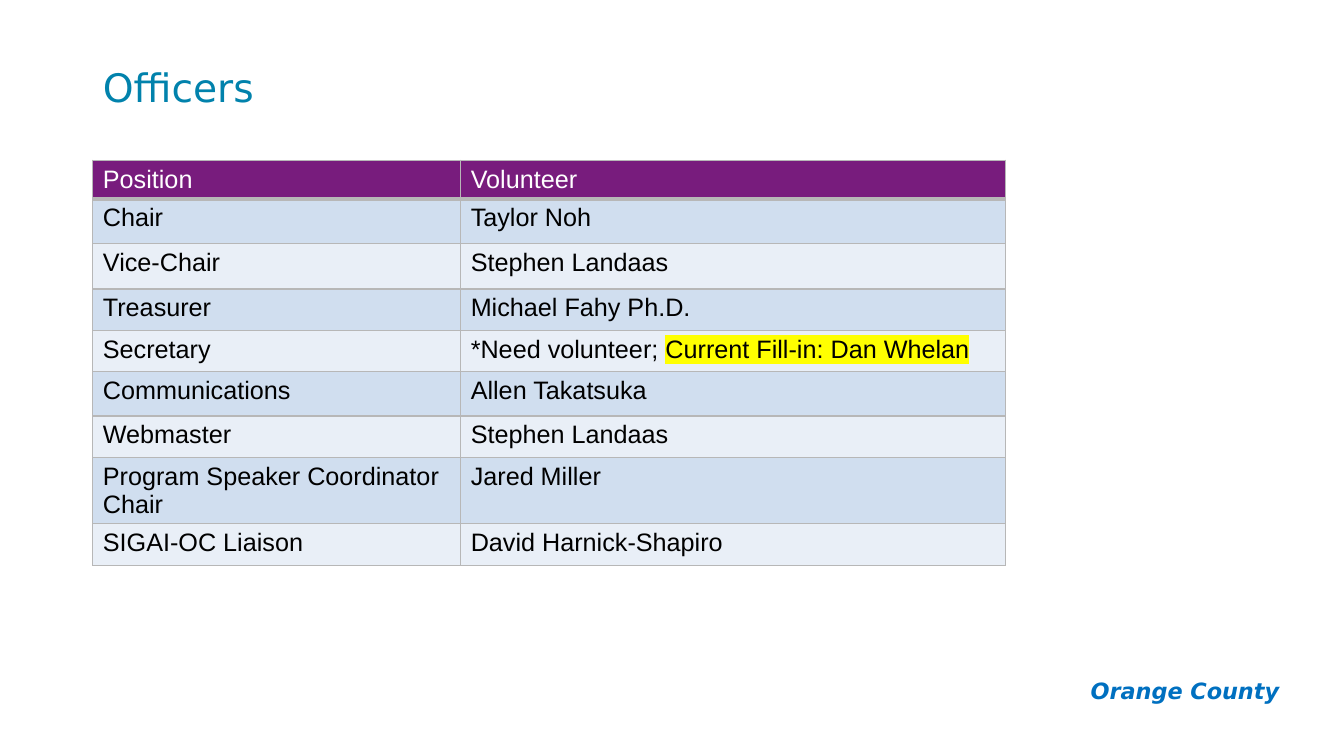
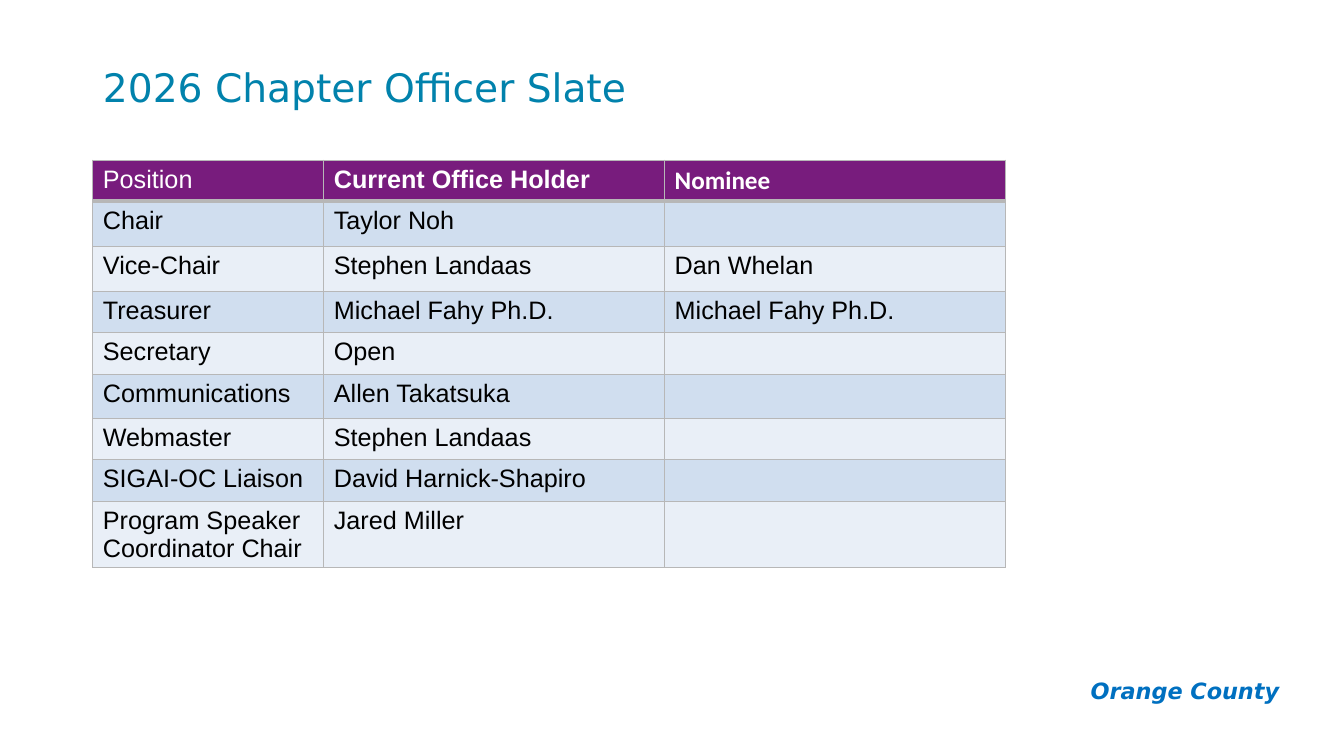
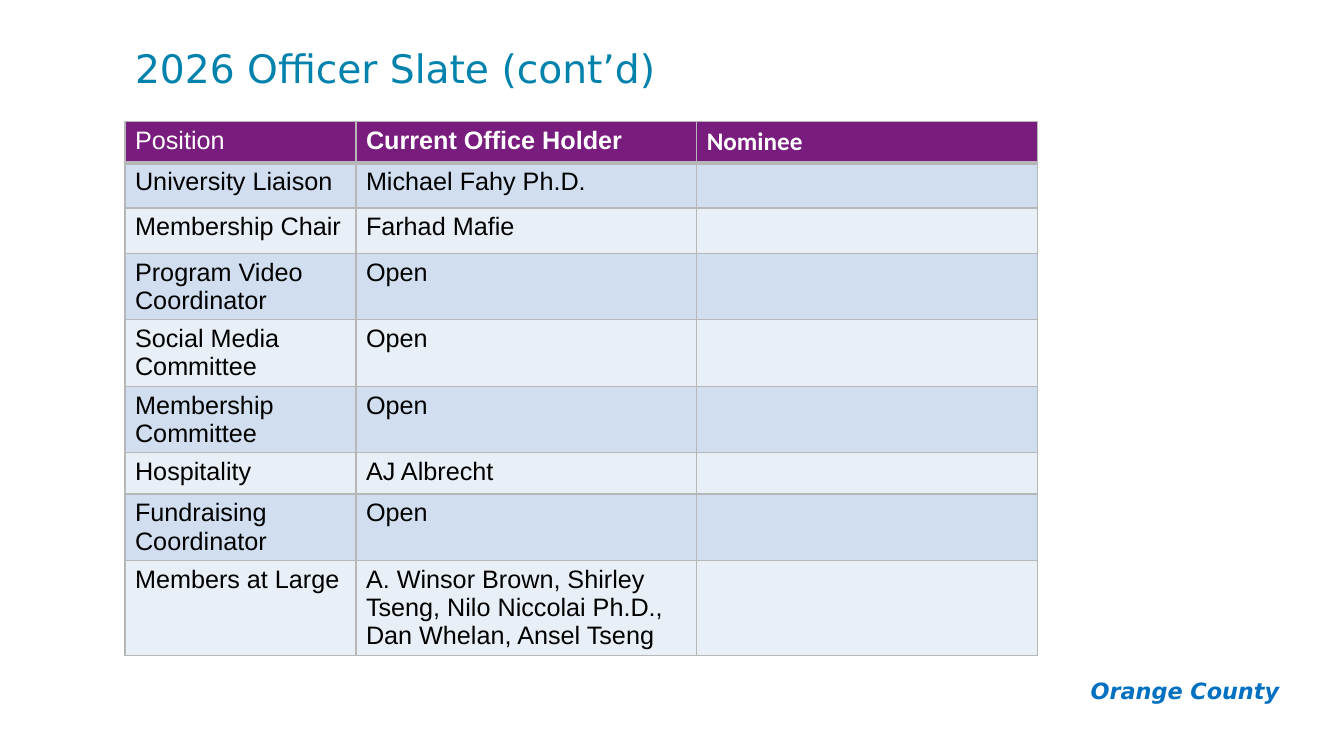
import pptx
import pptx.dml.color
import pptx.enum.text
import pptx.oxml
import pptx.oxml.ns
import pptx.util
from pptx.dml.color import RGBColor
from pptx.util import Cm

TEAL = RGBColor(0x01, 0x82, 0xAC)
BLUE = RGBColor(0x00, 0x70, 0xC0)
PURPLE = RGBColor(0x78, 0x1C, 0x7D)
BAND_DARK = RGBColor(0xD0, 0xDE, 0xEF)
BAND_LIGHT = RGBColor(0xE9, 0xEF, 0xF7)
GREY = RGBColor(0xB7, 0xB7, 0xB7)
YELLOW = RGBColor(0xFF, 0xFF, 0x00)
WHITE = RGBColor(0xFF, 0xFF, 0xFF)
BLACK = RGBColor(0x00, 0x00, 0x00)

TITLE_FONT = "DejaVu Sans"
TABLE_FONT = "Arial"
NAMESPACE = pptx.oxml.ns.nsdecls("a")
FILL_IN = "Current Fill-in: Dan Whelan"
SLATE_HEADER = ["Position", "Current Office Holder", "Nominee"]
SLATE_WIDTHS = [5.82, 8.59, 8.59]
OFFICER_HEIGHTS = [0.91, 1.14, 1.14, 1.04, 1.04, 1.12, 1.04, 1.04, 1.04]

SLIDES = [
    {
        "title": "Officers",
        "left": 2.34,
        "title_top": 1.02,
        "table_top": 4.04,
        "widths": [9.27, 13.72],
        "heights": OFFICER_HEIGHTS,
        "rows": [
            ["Position", "Volunteer"],
            ["Chair", "Taylor Noh"],
            ["Vice-Chair", "Stephen Landaas"],
            ["Treasurer", "Michael Fahy Ph.D."],
            ["Secretary", "*Need volunteer; " + FILL_IN],
            ["Communications", "Allen Takatsuka"],
            ["Webmaster", "Stephen Landaas"],
            ["Program Speaker Coordinator Chair", "Jared Miller"],
            ["SIGAI-OC Liaison", "David Harnick-Shapiro"],
        ],
    },
    {
        "title": "2026 Chapter Officer Slate",
        "left": 2.34,
        "title_top": 1.02,
        "table_top": 4.04,
        "widths": SLATE_WIDTHS,
        "heights": OFFICER_HEIGHTS,
        "rows": [
            SLATE_HEADER,
            ["Chair", "Taylor Noh", ""],
            ["Vice-Chair", "Stephen Landaas", "Dan Whelan"],
            ["Treasurer", "Michael Fahy Ph.D.", "Michael Fahy Ph.D."],
            ["Secretary", "Open", ""],
            ["Communications", "Allen Takatsuka", ""],
            ["Webmaster", "Stephen Landaas", ""],
            ["SIGAI-OC Liaison", "David Harnick-Shapiro", ""],
            ["Program Speaker Coordinator Chair", "Jared Miller", ""],
        ],
    },
    {
        "title": "2026 Officer Slate (cont’d)",
        "left": 3.15,
        "title_top": 0.53,
        "table_top": 3.07,
        "widths": SLATE_WIDTHS,
        "heights": [0.91, 1.14, 1.14] + [1.04] * 6,
        "rows": [
            SLATE_HEADER,
            ["University Liaison", "Michael Fahy Ph.D.", ""],
            ["Membership Chair", "Farhad Mafie", ""],
            ["Program Video Coordinator", "Open", ""],
            ["Social Media Committee", "Open", ""],
            ["Membership Committee", "Open", ""],
            ["Hospitality", "AJ Albrecht", ""],
            ["Fundraising Coordinator", "Open", ""],
            [
                "Members at Large",
                "A. Winsor Brown, Shirley Tseng, Nilo Niccolai Ph.D., Dan Whelan, Ansel Tseng",
                "",
            ],
        ],
    },
]


def add_run(paragraph, text, size, font_name, color, bold=False, italic=False):
    run = paragraph.add_run()
    run.text = text
    run.font.size = pptx.util.Pt(size)
    run.font.name = font_name
    run.font.color.rgb = color
    run.font.bold = bold
    run.font.italic = italic
    return run


def set_borders(cell, top, bottom):
    properties = cell._tc.get_or_add_tcPr()
    for side, points in (("L", 1), ("R", 1), ("T", top), ("B", bottom)):
        properties.append(pptx.oxml.parse_xml(
            f'<a:ln{side} {NAMESPACE} w="{pptx.util.Pt(points)}">'
            f'<a:solidFill><a:srgbClr val="{GREY}"/></a:solidFill></a:ln{side}>'
        ))


presentation = pptx.Presentation()
presentation.slide_width = Cm(33.87)
presentation.slide_height = Cm(19.05)
layout = presentation.slide_layouts[5]

for content in SLIDES:
    slide = presentation.slides.add_slide(layout)

    title = slide.shapes.title
    title.left, title.top = Cm(content["left"]), Cm(content["title_top"])
    title.width, title.height = Cm(29.21), Cm(2.51)
    title.text_frame.vertical_anchor = pptx.enum.text.MSO_ANCHOR.MIDDLE
    title.text_frame.auto_size = pptx.enum.text.MSO_AUTO_SIZE.NONE
    paragraph = title.text_frame.paragraphs[0]
    paragraph.alignment = pptx.enum.text.PP_ALIGN.LEFT
    paragraph.line_spacing = 0.9
    add_run(paragraph, content["title"], 28, TITLE_FONT, TEAL)

    rows, widths, heights = content["rows"], content["widths"], content["heights"]
    table = slide.shapes.add_table(
        len(rows), len(widths), Cm(content["left"]), Cm(content["table_top"]),
        Cm(sum(widths)), Cm(sum(heights)),
    ).table
    table.first_row = False
    table.horz_banding = False
    for column, width in zip(table.columns, widths):
        column.width = Cm(width)

    for row_index, row in enumerate(rows):
        table.rows[row_index].height = Cm(heights[row_index])
        is_header = row_index == 0
        band = BAND_DARK if row_index % 2 else BAND_LIGHT
        for column_index, text in enumerate(row):
            cell = table.cell(row_index, column_index)
            set_borders(cell, 3 if row_index == 1 else 1, 3 if is_header else 1)
            cell.fill.solid()
            cell.fill.fore_color.rgb = PURPLE if is_header else band
            paragraph = cell.text_frame.paragraphs[0]
            for part in filter(None, text.partition(FILL_IN)):
                run = add_run(
                    paragraph, part, 18,
                    "Calibri" if part == "Nominee" else TABLE_FONT,
                    WHITE if is_header else BLACK,
                    bold=part in SLATE_HEADER[1:],
                )
                if part == FILL_IN:
                    color_fill = run.font._element.find(pptx.oxml.ns.qn("a:solidFill"))
                    color_fill.addnext(pptx.oxml.parse_xml(
                        f'<a:highlight {NAMESPACE}><a:srgbClr val="{YELLOW}"/></a:highlight>'
                    ))

    footer = slide.shapes.add_textbox(Cm(26.7), Cm(16.81), Cm(5.79), Cm(1.19))
    frame = footer.text_frame
    frame.word_wrap = True
    frame.margin_left = frame.margin_right = Cm(0.25)
    frame.margin_top = frame.margin_bottom = Cm(0.25)
    paragraph = frame.paragraphs[0]
    paragraph.alignment = pptx.enum.text.PP_ALIGN.RIGHT
    add_run(paragraph, "Orange County", 16, TITLE_FONT, BLUE, bold=True, italic=True)

presentation.save("out.pptx")
